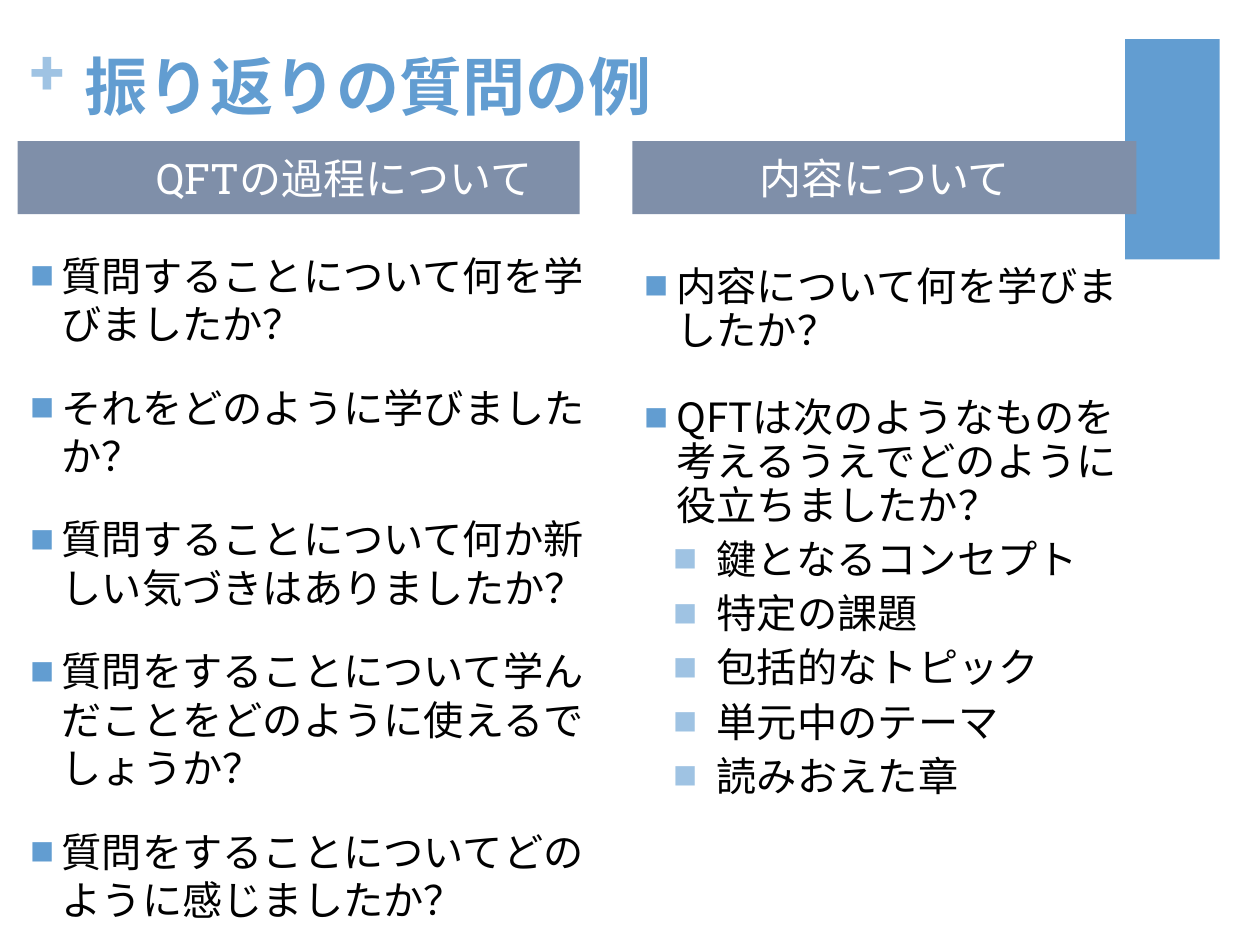
from dataclasses import dataclass
from typing import Any

from lxml import etree
from pptx import Presentation
from pptx import util as u
from pptx.dml import color
from pptx.enum import shapes, text
from pptx.oxml import ns

SANS, SLAB = "Noto Sans CJK JP", "Roboto Slab"
BLUE, PALE, SLATE, WHITE, BLACK = "629DD1", "9FC3E3", "7F8FA9", "FFFFFF", "000000"

PROCESS_QUESTIONS = [
    "質問することについて何を学びましたか？",
    "それをどのように学びましたか？",
    "質問することについて何か新しい気づきはありましたか？",
    "質問をすることについて学んだことをどのように使えるでしょうか？",
    "質問をすることについてどのように感じましたか？",
]
CONTENT_QUESTIONS = [
    "内容について何を学びましたか？",
    "QFTは次のようなものを考えるうえでどのように役立ちましたか？",
]
CONTENT_TOPICS = [
    "鍵となるコンセプト",
    "特定の課題",
    "包括的なトピック",
    "単元中のテーマ",
    "読みおえた章",
]


def rgb(value):
    return color.RGBColor.from_string(value)


@dataclass
class QuestionSlide:
    """Draws the bars, headings and bulleted questions in one style."""

    slide: Any
    east_asian: str = SANS
    body_size: float = 23
    header_size: float = 24

    def bar(self, left, top, width, height, fill):
        shape = self.slide.shapes.add_shape(
            shapes.MSO_SHAPE.RECTANGLE, *map(u.Inches, (left, top, width, height)))
        shape.shadow.inherit = False
        shape.fill.solid()
        shape.fill.fore_color.rgb = rgb(fill)
        shape.line.fill.background()
        return shape

    def frame(self, left, top, width, height, margins=(0.1, 0.05)):
        box = self.slide.shapes.add_textbox(*map(u.Inches, (left, top, width, height)))
        self.inset(box.text_frame, *margins)
        return box.text_frame

    def inset(self, frame, horizontal, vertical):
        frame.word_wrap = True
        frame.margin_left = frame.margin_right = u.Inches(horizontal)
        frame.margin_top = frame.margin_bottom = u.Inches(vertical)

    def add_words(self, paragraph, words, size, ink, font=SANS, bold=False):
        run = paragraph.add_run()
        run.text = words
        paragraph.font.size = run.font.size = u.Pt(size)
        run.font.name = font
        run.font.bold = bold
        run.font.color.rgb = rgb(ink)
        latin = run._r.get_or_add_rPr().find(ns.qn("a:latin"))
        latin.addnext(etree.Element(ns.qn("a:ea"), typeface=self.east_asian))

    def heading(self, place, words, ink, font, margins, line=None):
        paragraph = self.frame(*place, margins).paragraphs[0]
        paragraph.line_spacing = line
        self.add_words(paragraph, words, 36, ink, font, bold=True)

    def header(self, left, width, words, font, indent=None):
        frame = self.bar(left, 1.12, width, 0.58, SLATE).text_frame
        self.inset(frame, 0.1, 0)
        frame.vertical_anchor = text.MSO_ANCHOR.MIDDLE
        paragraph = frame.paragraphs[0]
        paragraph.alignment = text.PP_ALIGN.CENTER
        if indent:
            paragraph.alignment = text.PP_ALIGN.LEFT
            paragraph._p.get_or_add_pPr().set("marL", str(u.Inches(indent)))
        self.add_words(paragraph, words, self.header_size, WHITE, font)

    def bullet(self, paragraph, indent, hanging, ink):
        properties = paragraph._p.get_or_add_pPr()
        properties.set("marL", str(u.Inches(indent)))
        properties.set("indent", str(u.Inches(-hanging)))
        bullet_color = etree.SubElement(properties, ns.qn("a:buClr"))
        etree.SubElement(bullet_color, ns.qn("a:srgbClr"), val=ink)
        etree.SubElement(properties, ns.qn("a:buSzPct"), val="60000")
        etree.SubElement(properties, ns.qn("a:buFont"), typeface=SANS)
        etree.SubElement(properties, ns.qn("a:buChar"), char="■")

    def questions(self, frame, items, line, gap, level=0):
        indent, hanging, ink = ((0.25, 0.27, BLUE), (0.57, 0.34, PALE))[level]
        for words in items:
            first = not frame.text
            paragraph = frame.paragraphs[0] if first else frame.add_paragraph()
            paragraph.level = level
            paragraph.line_spacing = u.Pt(line)
            paragraph.space_before = u.Pt(0 if first else gap)
            self.bullet(paragraph, indent, hanging, ink)
            self.add_words(paragraph, words, self.body_size, BLACK)


def main():
    presentation = Presentation()
    presentation.slide_width, presentation.slide_height = u.Inches(10), u.Inches(7.5)
    page = QuestionSlide(presentation.slides.add_slide(presentation.slide_layouts[6]))

    page.bar(8.93, 0.31, 0.75, 1.75, BLUE)
    page.heading((0.24, 0.25, 0.29, 0.61), "+", PALE, SLAB, (0, 0))
    page.heading((0.57, 0.29, 8.26, 0.77), "振り返りの質問の例", BLUE, SANS,
                 (0.1, 0.05), u.Pt(46))

    process = page.frame(0.14, 1.94, 4.67, 5.75)
    page.questions(process, PROCESS_QUESTIONS, 27.7, 20)
    content = page.frame(5.02, 2.06, 4.18, 5.5)
    page.questions(content, CONTENT_QUESTIONS, 25, 25)
    page.questions(content, CONTENT_TOPICS, 25, 6, level=1)

    page.header(0.14, 4.46, "QFTの過程について", SLAB, indent=1)
    page.header(5.02, 4, "内容について", SANS)
    presentation.save("out.pptx")


if __name__ == "__main__":
    main()
